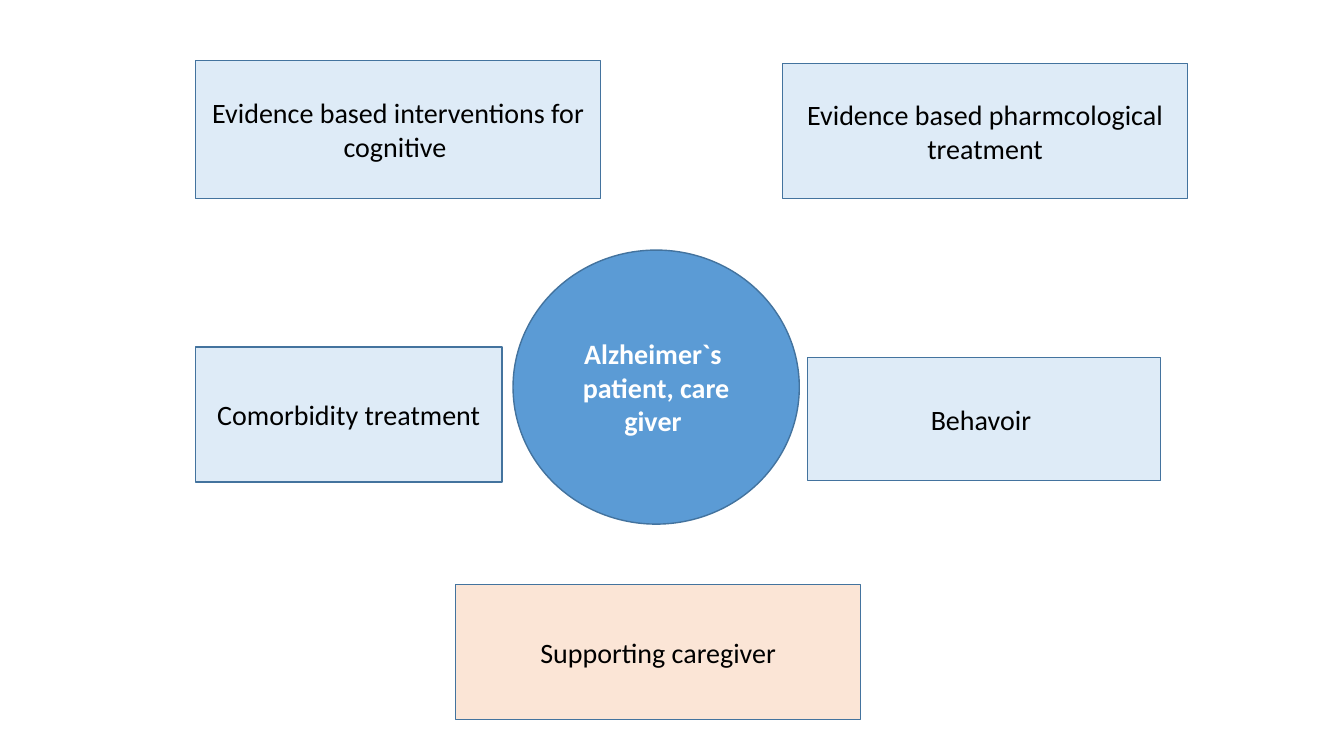
import pptx
import pptx.dml.color
import pptx.enum.shapes
import pptx.enum.text
import pptx.util

RGBColor = pptx.dml.color.RGBColor
Shape = pptx.enum.shapes.MSO_SHAPE

WHITE = RGBColor(0xFF, 0xFF, 0xFF)
BLACK = RGBColor(0x00, 0x00, 0x00)
BLUE = RGBColor(0x5B, 0x9B, 0xD5)
PALE_BLUE = RGBColor(0xDE, 0xEB, 0xF7)
PALE_ORANGE = RGBColor(0xFB, 0xE5, 0xD6)
OUTLINE = RGBColor(0x43, 0x73, 0x9E)

COLUMNS, ROWS = 40, 24
LEFT_EDGE = 5.82
WIDE, TALL = 12.06, 4.29


def write_text(frame, text, font="Calibri", size=20, color=BLACK, bold=False):
    frame.word_wrap = True
    frame.vertical_anchor = pptx.enum.text.MSO_ANCHOR.MIDDLE
    para = frame.paragraphs[0]
    para.alignment = pptx.enum.text.PP_ALIGN.CENTER
    span = para.add_run()
    span.text = text
    span.font.name = font
    span.font.size = pptx.util.Pt(size)
    span.font.bold = bold
    span.font.color.rgb = color


class CareDiagram:
    """Holds the grid, the outline style and the current slide."""

    def __init__(self, deck, outline=OUTLINE, outline_width=1):
        self.page = deck.slides.add_slide(deck.slide_layouts[6])
        self.column = deck.slide_width / COLUMNS
        self.row = deck.slide_height / ROWS
        self.outline = outline
        self.outline_width = pptx.util.Pt(outline_width)

    def add_outlined(self, kind, place, fill, text, **text_format):
        """Draw a shape; place is left, top, width, height in columns and rows."""
        left, top, width, height = place
        shape = self.page.shapes.add_shape(
            kind,
            round(left * self.column), round(top * self.row),
            round(width * self.column), round(height * self.row))
        shape.shadow.inherit = False
        shape.fill.solid()
        shape.fill.fore_color.rgb = fill
        shape.line.color.rgb = self.outline
        shape.line.width = self.outline_width
        write_text(shape.text_frame, text, **text_format)

    def add_hub(self, place, text):
        self.add_outlined(Shape.OVAL, place, BLUE, text, color=WHITE, bold=True)

    def add_box(self, place, text, fill=PALE_BLUE):
        self.add_outlined(Shape.RECTANGLE, place, fill, text)


def main():
    deck = pptx.Presentation()
    deck.slide_width = pptx.util.Inches(13.33)
    deck.slide_height = pptx.util.Inches(7.5)

    diagram = CareDiagram(deck)
    diagram.add_hub((15.27, 7.94, 8.52, 8.7), "Alzheimer`s  patient, care giver ")
    diagram.add_box((23.29, 2.02, WIDE, TALL), "Evidence based pharmcological treatment")
    diagram.add_box((LEFT_EDGE, 1.92, WIDE, 4.38), "Evidence based interventions for cognitive ")
    diagram.add_box((13.56, 18.56, WIDE, TALL), "Supporting caregiver", fill=PALE_ORANGE)
    diagram.add_box((24.04, 11.36, 10.5, 3.9), "Behavoir ")
    diagram.add_box((LEFT_EDGE, 11.01, 9.12, TALL), "Comorbidity treatment")

    deck.save("out.pptx")


if __name__ == "__main__":
    main()
